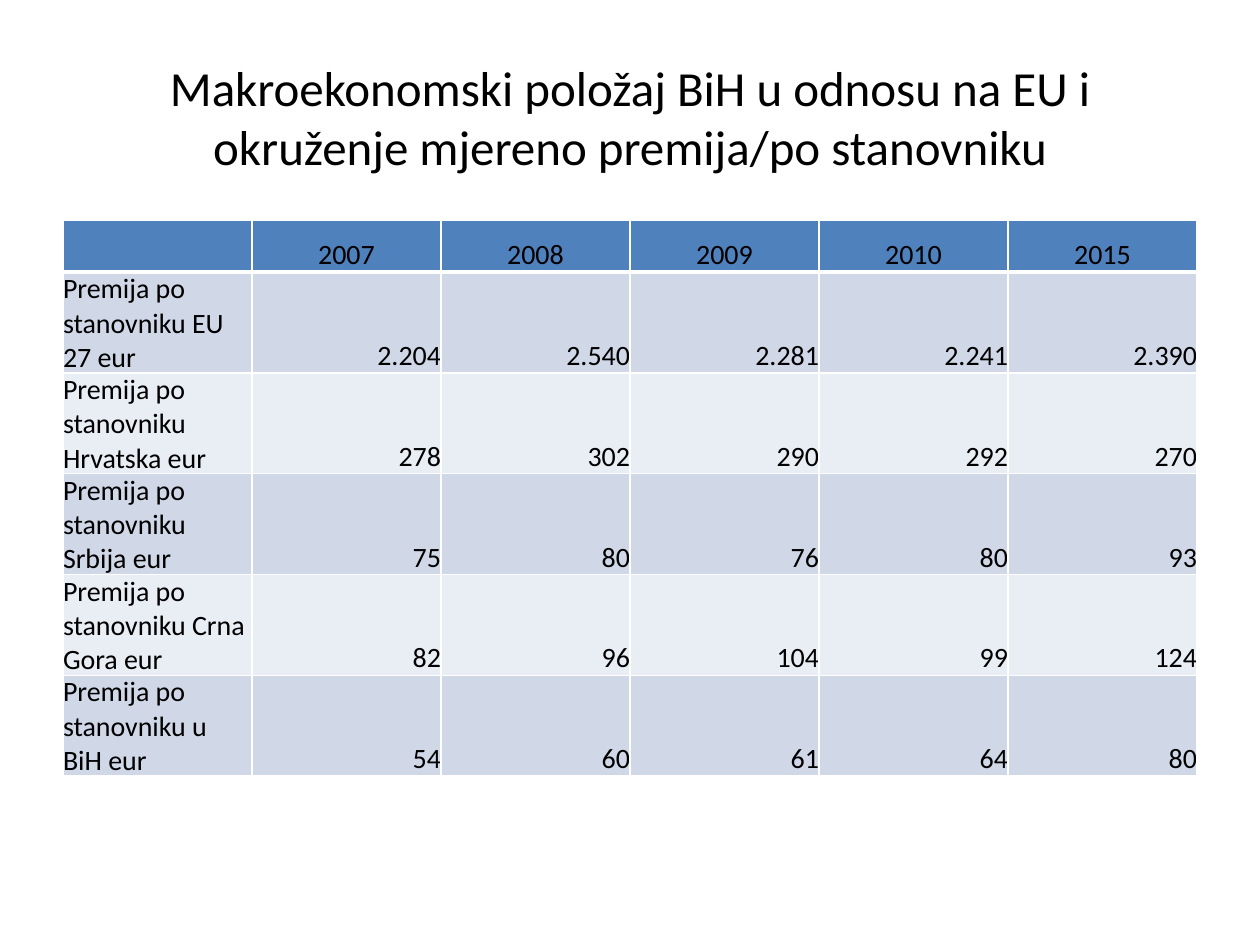
import pptx
import pptx.dml.color
import pptx.enum.text
import pptx.oxml
import pptx.oxml.ns
import pptx.util

Inches, Pt = pptx.util.Inches, pptx.util.Pt
RGBColor = pptx.dml.color.RGBColor
PP_ALIGN = pptx.enum.text.PP_ALIGN
MSO_ANCHOR = pptx.enum.text.MSO_ANCHOR

# Content
TITLE = "Makroekonomski položaj BiH u odnosu na EU i okruženje mjereno premija/po stanovniku"
ROWS = [
    ("", "2007", "2008", "2009", "2010", "2015"),
    ("Premija po stanovniku EU 27 eur", "2.204", "2.540", "2.281", "2.241", "2.390"),
    ("Premija po stanovniku Hrvatska eur", "278", "302", "290", "292", "270"),
    ("Premija po stanovniku Srbija eur", "75", "80", "76", "80", "93"),
    ("Premija po stanovniku Crna Gora eur", "82", "96", "104", "99", "124"),
    ("Premija po stanovniku u BiH eur", "54", "60", "61", "64", "80"),
]
COLORS = {
    "text": "000000",
    "header": "4F81BD",
    "odd": "D0D8E8",
    "even": "E9EDF4",
    "border": "FFFFFF",
}
FONT = "Calibri"
LEFT, WIDTH = 0.5, 9
TABLE_TOP, TABLE_HEIGHT, ROW_HEIGHT = 1.75, 4.41, 0.41


def format_paragraph(paragraph, size, alignment):
    paragraph.alignment = alignment
    for font in [paragraph.font] + [run.font for run in paragraph.runs]:
        font.name = FONT
        font.size = Pt(size)
        font.color.rgb = RGBColor.from_string(COLORS["text"])


def set_borders(cell, bottom_width, top_width):
    properties = cell._tc.get_or_add_tcPr()
    widths = {"lnL": 1, "lnR": 1, "lnT": top_width, "lnB": bottom_width}
    for index, (tag, width) in enumerate(widths.items()):
        properties.insert(index, pptx.oxml.parse_xml(
            f'<a:{tag} {pptx.oxml.ns.nsdecls("a")} w="{Pt(width)}"><a:solidFill>'
            f'<a:srgbClr val="{COLORS["border"]}"/></a:solidFill></a:{tag}>'))


presentation = pptx.Presentation()
presentation.slide_width, presentation.slide_height = Inches(10), Inches(7.5)
slide = presentation.slides.add_slide(presentation.slide_layouts[6])

# Title
title = slide.shapes.add_textbox(Inches(LEFT), Inches(0.3), Inches(WIDTH), Inches(1.25))
title_frame = title.text_frame
title_frame.word_wrap = True
title_frame.vertical_anchor = MSO_ANCHOR.MIDDLE
title_frame.text = TITLE
format_paragraph(title_frame.paragraphs[0], 28, PP_ALIGN.CENTER)

# Table
table_shape = slide.shapes.add_table(
    len(ROWS), len(ROWS[0]), Inches(LEFT), Inches(TABLE_TOP), Inches(WIDTH), Inches(TABLE_HEIGHT))
table = table_shape.table
for row_index, values in enumerate(ROWS):
    table.rows[row_index].height = Inches(ROW_HEIGHT)
    is_header = row_index == 0
    fill = "header" if is_header else ("odd" if row_index % 2 else "even")
    for column_index, value in enumerate(values):
        cell = table.cell(row_index, column_index)
        cell.text_frame.text = value
        cell.vertical_anchor = MSO_ANCHOR.BOTTOM
        cell.margin_left = cell.margin_right = cell.margin_top = cell.margin_bottom = 0
        cell.fill.solid()
        cell.fill.fore_color.rgb = RGBColor.from_string(COLORS[fill])
        set_borders(cell, 3 if is_header else 1, 3 if row_index == 1 else 1)
        if is_header:
            alignment = PP_ALIGN.CENTER
        else:
            alignment = PP_ALIGN.RIGHT if column_index else PP_ALIGN.LEFT
        paragraph = cell.text_frame.paragraphs[0]
        format_paragraph(paragraph, 16, alignment)
        paragraph.font.bold = False
        for run in paragraph.runs:
            run.font.bold = False
table_shape.height = Inches(TABLE_HEIGHT)

presentation.save("out.pptx")
